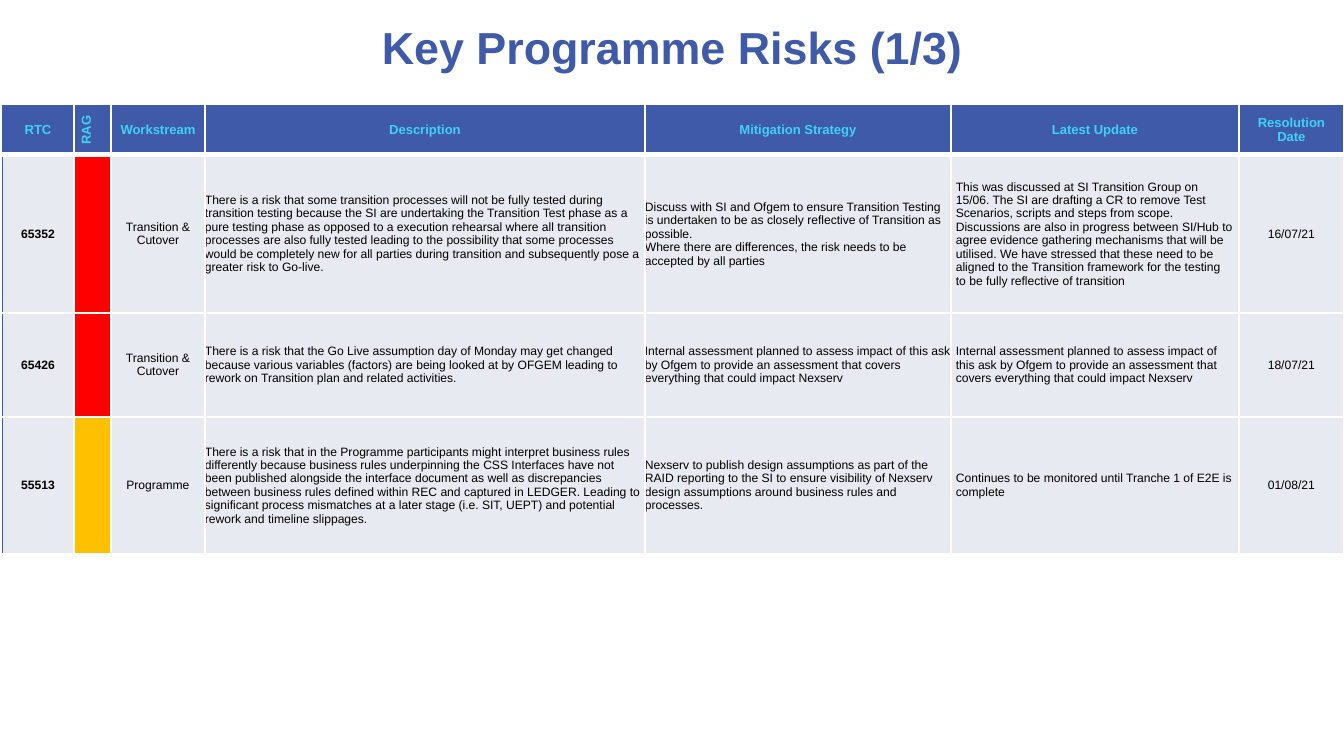
from lxml.etree import SubElement
from pptx import Presentation
from pptx.dml.color import RGBColor
from pptx.enum.text import MSO_ANCHOR, PP_ALIGN
from pptx.oxml.ns import qn
from pptx.util import Emu, Pt

FONT = "Arial"
BLUE, CYAN, PALE = "3E5AA8", "40D1F5", "E8EAF1"
WHITE, BLACK = "FFFFFF", "000000"
RED, AMBER = "FF0000", "FFC000"

COLUMN_WIDTHS = [72, 37, 94, 440, 306, 288, 105]
ROW_HEIGHTS = [50, 158, 104, 137]
BODY_INSETS = [0, 0, 1, 0, 0, 5, 0]
RTC, RAG = 0, 1
LEFT_ALIGNED = {3, 4, 5}

HEADERS = ["RTC", "RAG", "Workstream", "Description", "Mitigation Strategy",
           "Latest Update", "Resolution\nDate"]
ASSESSMENT = ("Internal assessment planned to assess impact of this ask by Ofgem to provide "
              "an assessment that covers everything that could impact Nexserv")
# The RAG column holds a fill colour instead of text.
RISKS = [
    ["65352", RED, "Transition & Cutover",
     "There is a risk that some transition processes will not be fully tested during "
     "transition testing because the SI are undertaking the Transition Test phase as a pure "
     "testing phase as opposed to a execution rehearsal where all transition processes are "
     "also fully tested leading to the possibility that some processes would be completely "
     "new for all parties during transition and subsequently pose a greater risk to Go-live.",
     "Discuss with SI and Ofgem to ensure Transition Testing is undertaken to be as closely "
     "reflective of Transition as possible.\n"
     "Where there are differences, the risk needs to be accepted by all parties",
     "This was discussed at SI Transition Group on 15/06. The SI are drafting a CR to remove "
     "Test Scenarios, scripts and steps from scope. Discussions are also in progress between "
     "SI/Hub to agree evidence gathering mechanisms that will be utilised. We have stressed "
     "that these need to be aligned to the Transition framework for the testing to be fully "
     "reflective of transition",
     "16/07/21"],
    ["65426", RED, "Transition & Cutover",
     "There is a risk that the Go Live assumption day of Monday may get changed because "
     "various variables (factors) are being looked at by OFGEM leading to rework on "
     "Transition plan and related activities.",
     ASSESSMENT, ASSESSMENT, "18/07/21"],
    ["55513", AMBER, "Programme",
     "There is a risk that in the Programme participants might interpret business rules "
     "differently because business rules underpinning the CSS Interfaces have not been "
     "published alongside the interface document as well as discrepancies between business "
     "rules defined within REC and captured in LEDGER. Leading to significant process "
     "mismatches at a later stage (i.e. SIT, UEPT) and potential rework and timeline "
     "slippages.",
     "Nexserv to publish design assumptions as part of the RAID reporting to the SI to ensure "
     "visibility of Nexserv design assumptions around business rules and processes.",
     "Continues to be monitored until Tranche 1 of E2E is complete",
     "01/08/21"],
]


def px(length):
    return Emu(round(length * 914400 / 134.4))


def color(value):
    return RGBColor.from_string(value)


def write_text(frame, text, size, text_color, bold, align):
    frame.text = text
    for paragraph in frame.paragraphs:
        paragraph.alignment = align
        font = paragraph.font
        font.name, font.size, font.bold = FONT, Pt(size), bold
        font.color.rgb = color(text_color)


def add_title(slide, text):
    box = slide.shapes.add_textbox(px(67), px(0), px(1210), px(94))
    box.text_frame.word_wrap = True
    box.text_frame.vertical_anchor = MSO_ANCHOR.MIDDLE
    write_text(box.text_frame, text, 24, BLUE, True, PP_ALIGN.CENTER)


def style_cell(cell, fill, inset, borders):
    """Set fill, insets and borders; borders maps L, R, T, B to (colour, points)."""
    cell.vertical_anchor = MSO_ANCHOR.MIDDLE
    cell.margin_left = cell.margin_right = px(inset)
    cell.margin_top = cell.margin_bottom = px(inset)
    properties = cell._tc.get_or_add_tcPr()
    for side, (line_color, width) in borders.items():
        line = SubElement(properties, qn(f"a:ln{side}"), w=str(Pt(width)))
        SubElement(SubElement(line, qn("a:solidFill")), qn("a:srgbClr"), val=line_color)
    cell.fill.solid()
    cell.fill.fore_color.rgb = color(fill)


def cell_borders(row, column):
    thin_white, thick_white, thin_blue = (WHITE, 1), (WHITE, 3), (BLUE, 0.5)
    return {
        "L": thin_blue if column == RTC else thin_white,
        "R": thin_white,
        "T": {0: thin_blue, 1: thick_white}.get(row, thin_white),
        "B": thick_white if row == 0 else thin_white,
    }


def fill_header(table):
    for column, text in enumerate(HEADERS):
        cell = table.cell(0, column)
        style_cell(cell, BLUE, 5, cell_borders(0, column))
        write_text(cell.text_frame, text, 7, CYAN, True, PP_ALIGN.CENTER)
    table.cell(0, RAG)._tc.get_or_add_tcPr().set("vert", "vert270")


def fill_risk(table, row, values):
    for column, value in enumerate(values):
        cell = table.cell(row, column)
        fill, text = (value, "") if column == RAG else (PALE, value)
        align = PP_ALIGN.LEFT if column in LEFT_ALIGNED else PP_ALIGN.CENTER
        style_cell(cell, fill, BODY_INSETS[column], cell_borders(row, column))
        write_text(cell.text_frame, text, 6.5, BLACK, column == RTC, align)


def add_risk_table(slide):
    frame = slide.shapes.add_table(len(ROW_HEIGHTS), len(COLUMN_WIDTHS), px(2), px(105),
                                   px(sum(COLUMN_WIDTHS)), px(sum(ROW_HEIGHTS)))
    table = frame.table
    for column, width in zip(table.columns, COLUMN_WIDTHS):
        column.width = px(width)
    for row, height in zip(table.rows, ROW_HEIGHTS):
        row.height = px(height)
    fill_header(table)
    for row, values in enumerate(RISKS, start=1):
        fill_risk(table, row, values)


def main():
    presentation = Presentation()
    presentation.slide_width, presentation.slide_height = px(1344), px(756)
    slide = presentation.slides.add_slide(presentation.slide_layouts[6])
    add_title(slide, "Key Programme Risks (1/3)")
    add_risk_table(slide)
    presentation.save("out.pptx")


if __name__ == "__main__":
    main()
